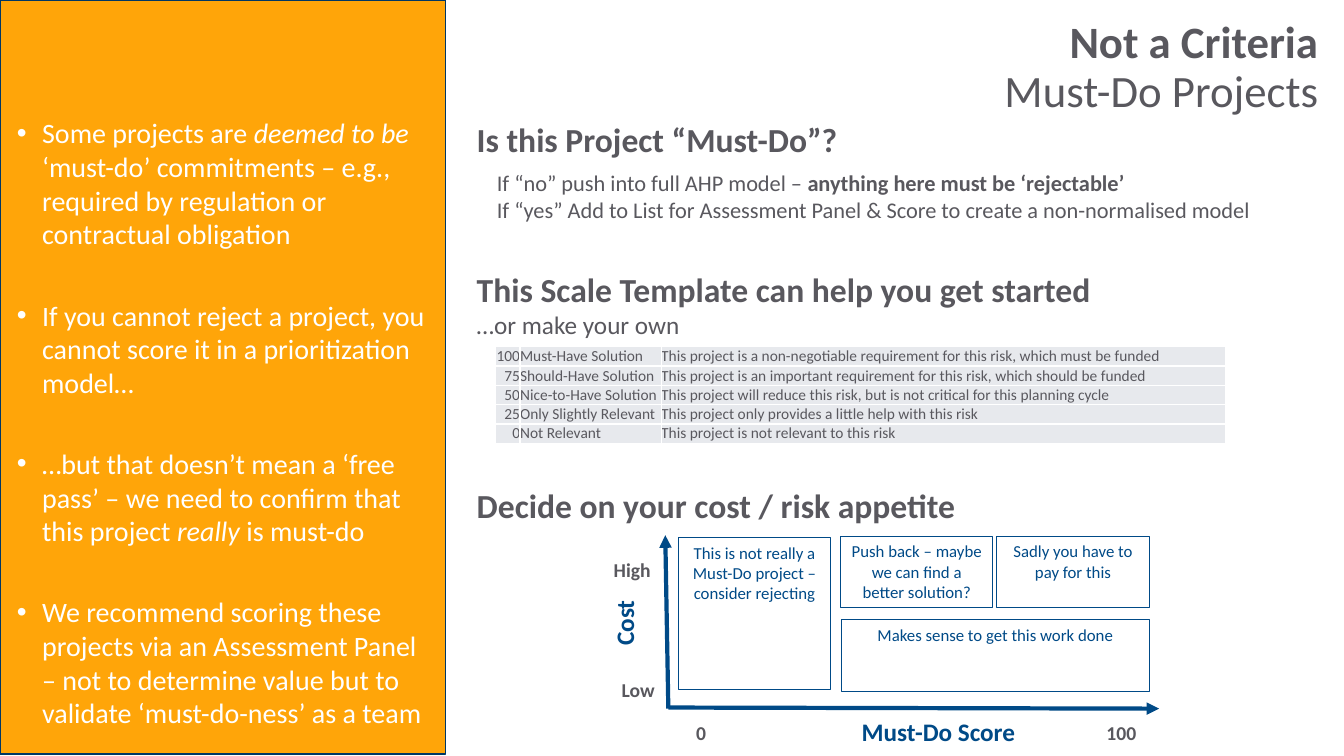
from lxml import etree
from pptx import Presentation
from pptx.dml.color import RGBColor
from pptx.enum.shapes import MSO_CONNECTOR, MSO_SHAPE
from pptx.enum.text import MSO_ANCHOR, MSO_AUTO_SIZE, PP_ALIGN
from pptx.oxml.ns import qn
from pptx.util import Pt

LEFT, CENTER, RIGHT = PP_ALIGN.LEFT, PP_ALIGN.CENTER, PP_ALIGN.RIGHT
TOP, MIDDLE, BOTTOM = MSO_ANCHOR.TOP, MSO_ANCHOR.MIDDLE, MSO_ANCHOR.BOTTOM
RECTANGLE, STRAIGHT = MSO_SHAPE.RECTANGLE, MSO_CONNECTOR.STRAIGHT

THEME = {
    "font": "Calibri",
    "orange": RGBColor(0xFF, 0xA5, 0x09),
    "navy": RGBColor(0x00, 0x37, 0x64),
    "blue": RGBColor(0x00, 0x4A, 0x87),
    "grey": RGBColor(0x59, 0x58, 0x5E),
    "pale": RGBColor(0xE7, 0xE9, 0xED),
    "white": RGBColor(0xFF, 0xFF, 0xFF),
    "title": Pt(32), "heading": Pt(24), "bullet": Pt(20), "axis": Pt(18),
    "body": Pt(16), "tick": Pt(14), "note": Pt(12), "cell": Pt(11),
}
BOLD, ITALIC = {"bold": True}, {"italic": True}


def write(frame, paragraphs, size, color, align=LEFT):
    """Each paragraph is a list of (text, font formats) spans."""
    frame.word_wrap = True
    for index, spans in enumerate(paragraphs):
        para = frame.paragraphs[0] if index == 0 else frame.add_paragraph()
        para.alignment = align
        for text, formats in spans:
            span = para.add_run()
            span.text = text
            span.font.color.rgb = THEME[color]
            values = {"name": THEME["font"], "size": THEME[size], **formats}
            for name, value in values.items():
                setattr(span.font, name, value)


def add_text(left, top, width, height, paragraphs, size, color, align=LEFT):
    box = page.shapes.add_textbox(Pt(left), Pt(top), Pt(width), Pt(height))
    write(box.text_frame, paragraphs, size, color, align)
    return box


deck = Presentation()
deck.slide_width, deck.slide_height = Pt(960), Pt(540)
page = deck.slides.add_slide(deck.slide_layouts[5])

# Title
title = page.shapes.title
for name, value in {"left": 586.8, "top": 6.5, "width": 362.2, "height": 85}.items():
    setattr(title, name, Pt(value))
title.text_frame.auto_size = MSO_AUTO_SIZE.NONE
title.text_frame.vertical_anchor = MIDDLE
write(title.text_frame, [[("Not a Criteria", BOLD)], [("Must-Do Projects", {"bold": False})]],
      "title", "grey", RIGHT)
for para in title.text_frame.paragraphs:
    para.line_spacing = 0.9
    para.space_before = Pt(0)

# Orange side panel
panel = page.shapes.add_shape(RECTANGLE, 0, 0, Pt(318.2), Pt(538.6))
panel.shadow.inherit = False
panel.fill.solid()
panel.fill.fore_color.rgb = THEME["orange"]
panel.line.color.rgb = THEME["navy"]
panel.line.width = Pt(0.85)

# Side panel bullets
bullets = [
    [("Some projects are ", {}), ("deemed to be ", ITALIC),
     ("‘must-do’ commitments – e.g., required by regulation or contractual obligation", {})],
    [("If you cannot reject a project, you cannot score it in a prioritization model…", {})],
    [("…but that doesn’t mean a ‘free pass’ – we need to confirm that this project ", {}),
     ("really", ITALIC), (" is must-do", {})],
    [("We recommend scoring these projects via an Assessment Panel – not to determine value "
      "but to validate ‘must-do-ness’ as a team", {})],
]
body = add_text(5, 79.3, 311, 446, bullets, "bullet", "white")
for index, para in enumerate(body.text_frame.paragraphs):
    para.line_spacing = Pt(24)
    para.space_before = Pt(34 if index else 0)
    properties = para._p.get_or_add_pPr()
    properties.set("marL", str(Pt(18)))
    properties.set("indent", str(Pt(-18)))
    etree.SubElement(properties, qn("a:buFont"), typeface="Arial")
    etree.SubElement(properties, qn("a:buChar"), char="•")

# Headings and question
HEADING_LEFT = 333.4
for top, heading in [(81.4, "Is this Project “Must-Do”?"),
                     (342.7, "Decide on your cost / risk appetite")]:
    add_text(HEADING_LEFT, top, 400, 36, [[(heading, BOLD)]], "heading", "grey")
add_text(HEADING_LEFT, 188.6, 508, 58,
         [[("This Scale Template can help you get started", BOLD)],
          [("…or make your own", {"size": THEME["axis"]})]], "heading", "grey")
add_text(347.8, 117.4, 570, 46,
         [[("If “no” push into full AHP model – ", {}),
           ("anything here must be ‘rejectable’", BOLD)],
          [("If “yes” Add to List for Assessment Panel & Score "
            "to create a non-normalised model", {})]], "body", "grey")

# Scale table
scale = [
    ("100", "Must-Have Solution",
     "This project is a non-negotiable requirement for this risk, which must be funded"),
    ("75", "Should-Have Solution",
     "This project is an important requirement for this risk, which should be funded"),
    ("50", "Nice-to-Have Solution",
     "This project will reduce this risk, but is not critical for this planning cycle"),
    ("25", "Only Slightly Relevant", "This project only provides a little help with this risk"),
    ("0", "Not Relevant", "This project is not relevant to this risk"),
]
columns = [(17.3, RIGHT, BOTTOM), (100.8, LEFT, BOTTOM), (403.2, LEFT, MIDDLE)]
table = page.shapes.add_table(len(scale), len(columns), Pt(354.2), Pt(247.7),
                              Pt(521.3), Pt(69)).table
table.first_row = table.horz_banding = False
for column, (width, align, anchor) in enumerate(columns):
    table.columns[column].width = Pt(width)
    for row, texts in enumerate(scale):
        table.rows[row].height = Pt(13.8)
        cell = table.cell(row, column)
        for side in ("left", "right", "top", "bottom"):
            setattr(cell, "margin_" + side, 0)
        cell.vertical_anchor = anchor
        write(cell.text_frame, [[(texts[column], {})]], "cell", "grey", align)
        properties = cell._tc.get_or_add_tcPr()
        for edge in ("a:lnL", "a:lnR", "a:lnT", "a:lnB"):
            border = etree.SubElement(properties, qn(edge), w=str(Pt(1)))
            paint = etree.SubElement(border, qn("a:solidFill"))
            etree.SubElement(paint, qn("a:srgbClr"), val=str(THEME["white"]))
        cell.fill.solid()
        cell.fill.fore_color.rgb = THEME["pale"]

# Chart axes
for start_x, start_y, end_x, end_y in [(477.4, 505.4, 828, 506.2), (477.4, 506.2, 475.2, 382.3)]:
    axis = page.shapes.add_connector(STRAIGHT, Pt(start_x), Pt(start_y), Pt(end_x), Pt(end_y))
    axis.line.color.rgb = THEME["blue"]
    axis.line.width = Pt(3)
    etree.SubElement(axis.line._get_or_add_ln(), qn("a:tailEnd"), type="triangle")
    etree.SubElement(axis._element.spPr, qn("a:effectLst"))

# Axis labels
for left, top, width, label, align in [
        (437, 481, 45, "Low", LEFT), (431.3, 395.2, 46, "High", LEFT),
        (478.3, 511.2, 45, "0", CENTER), (778.5, 511.2, 45, "100", CENTER)]:
    add_text(left, top, width, 24.5, [[(label, BOLD)]], "tick", "grey", align)
add_text(608.4, 508.3, 135, 29, [[("Must-Do Score", BOLD)]], "axis", "blue")
cost = add_text(416, 430.5, 60, 29, [[("Cost", BOLD)]], "axis", "blue", CENTER)
cost.rotation = 270

# Decision areas
for left, top, width, height, advice in [
        (484.6, 383.8, 108.7, 108.7, "This is not really a Must-Do project – consider rejecting"),
        (600.5, 383, 108.7, 51.1, "Push back – maybe we can find a better solution?"),
        (712.1, 383, 108.7, 51.1, "Sadly you have to pay for this"),
        (601.2, 442.8, 219.6, 51.1, "Makes sense to get this work done")]:
    area = page.shapes.add_shape(RECTANGLE, Pt(left), Pt(top), Pt(width), Pt(height))
    area.shadow.inherit = False
    area.fill.background()
    area.line.color.rgb = THEME["blue"]
    area.line.width = Pt(0.75)
    area.text_frame.vertical_anchor = TOP
    write(area.text_frame, [[(advice, {})]], "note", "blue", CENTER)

deck.save("out.pptx")
